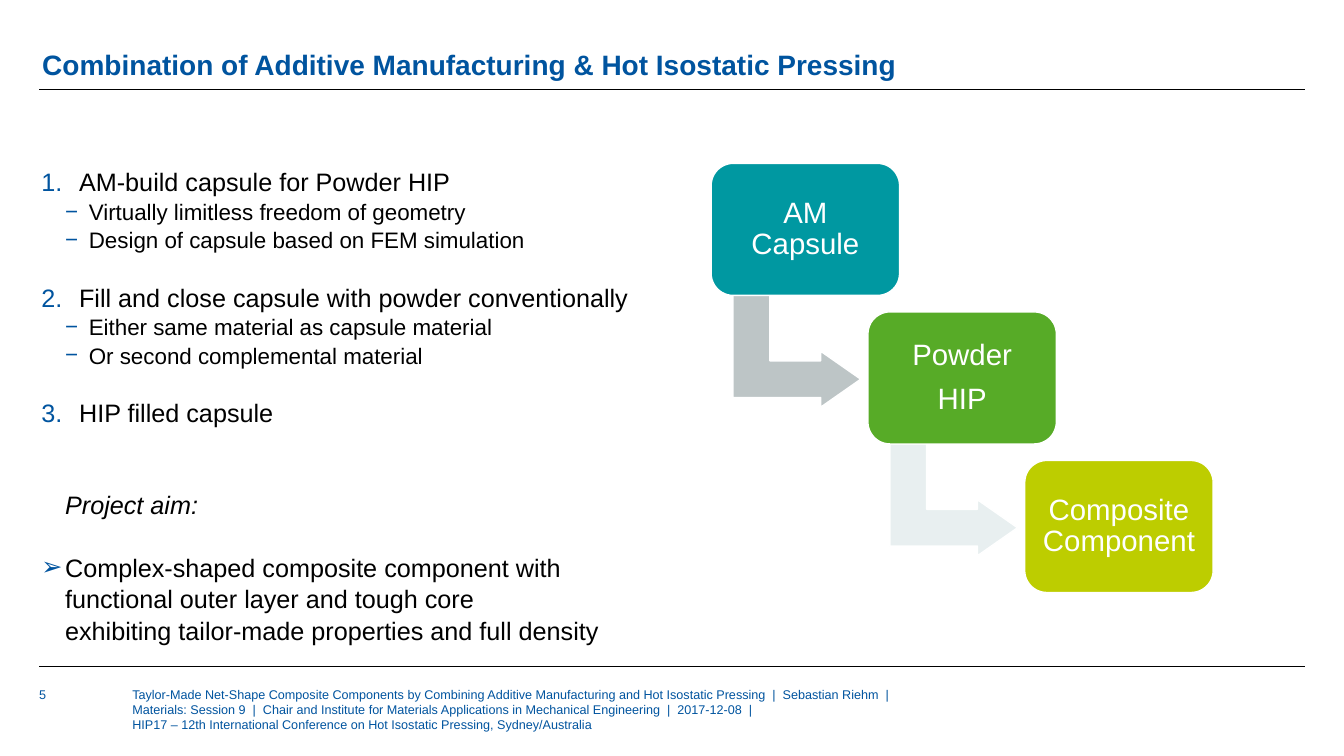
from lxml.etree import SubElement as Sub
from pptx import Presentation
from pptx.dml.color import RGBColor as RGB
from pptx.enum.shapes import MSO_CONNECTOR as Conn, MSO_SHAPE as Kind
from pptx.enum.text import MSO_ANCHOR as Anchor, PP_ALIGN as Align
from pptx.oxml.ns import qn
from pptx.util import Pt

BLUE, BLACK, WHITE = "00549F", "000000", "FFFFFF"


def color(code):
    return RGB.from_string(code)


def write(par, text, size=18, ink=BLACK, bold=False, italic=False, align=None,
          space=None, before=0, level=0, left=0, hang=0, mark=None):
    """Fill one paragraph; mark is a bullet sign, or "1." for numbers."""
    par.text = text
    par.level = level
    props = par._p.get_or_add_pPr()
    props.set("marL", str(Pt(left)))
    props.set("indent", str(Pt(-hang)))
    if mark:
        tint = Sub(props, qn("a:buClr"))
        Sub(tint, qn("a:srgbClr"), val=BLUE)
        Sub(props, qn("a:buFont"), typeface="Arial")
        if mark == "1.":
            Sub(props, qn("a:buAutoNum"), type="arabicPeriod")
        else:
            Sub(props, qn("a:buChar"), char=mark)
    par.alignment = align
    par.line_spacing = space
    par.space_before = Pt(before)
    for run in par.runs:
        font = run.font
        font.name, font.size = "Arial", Pt(size)
        font.bold, font.italic = bold, italic
        font.color.rgb = color(ink)


class Page:
    def __init__(self, deck):
        self.shapes = deck.slides.add_slide(deck.slide_layouts[6]).shapes

    def fill(self, frame, items, anchor, inset=0, **style):
        """Write (text, format) items, one paragraph each."""
        frame.word_wrap = True
        frame.vertical_anchor = anchor
        frame.margin_left = frame.margin_right = Pt(inset)
        frame.margin_top = frame.margin_bottom = Pt(inset)
        for i, (text, extra) in enumerate(items):
            par = frame.add_paragraph() if i else frame.paragraphs[0]
            write(par, text, **{**style, **extra})

    def text(self, x, y, w, h, items, anchor=Anchor.TOP, **style):
        box = self.shapes.add_textbox(Pt(x), Pt(y), Pt(w), Pt(h))
        self.fill(box.text_frame, items, anchor, **style)

    def rule(self, y, x=28, end=932.5):
        line = self.shapes.add_connector(Conn.STRAIGHT, Pt(x), Pt(y), Pt(end), Pt(y))
        line.line.color.rgb = color(BLACK)
        line.line.width = Pt(0.5)
        Sub(line._element.spPr, qn("a:effectLst"))

    def shape(self, kind, x, y, w, h, fill, adjust):
        item = self.shapes.add_shape(kind, Pt(x), Pt(y), Pt(w), Pt(h))
        item.shadow.inherit = False
        item.fill.solid()
        item.fill.fore_color.rgb = color(fill)
        item.line.color.rgb = color(WHITE)
        item.line.width = Pt(1)
        for i, value in enumerate(adjust):
            item.adjustments[i] = value
        return item

    def card(self, x, y, fill, lines):
        card = self.shape(Kind.ROUNDED_RECTANGLE, x, y, 134.6, 94.3, fill, [0.167])
        items = [(line, {"before": 8.4 if i else 0}) for i, line in enumerate(lines)]
        self.fill(card.text_frame, items, Anchor.MIDDLE, inset=6.5, size=21,
                  ink=WHITE, align=Align.CENTER, space=0.9)

    def arrow(self, x, y, fill):
        arrow = self.shape(Kind.BENT_UP_ARROW, x, y, 80, 91.2, fill,
                           [0.328, 0.25, 0.358])
        arrow.rotation = 90


def main():
    deck = Presentation()
    deck.slide_width, deck.slide_height = Pt(960), Pt(540)
    page = Page(deck)

    # Footer and rules
    footer = [
        "Taylor-Made Net-Shape Composite Components by Combining Additive "
        "Manufacturing and Hot Isostatic Pressing  |  Sebastian Riehm  |",
        "Materials: Session 9  |  Chair and Institute for Materials Applications "
        "in Mechanical Engineering  |  2017-12-08  |",
        "HIP17 – 12th International Conference on Hot Isostatic Pressing, "
        "Sydney/Australia",
    ]
    page.text(94.5, 490.3, 551.5, 49.7, [(line, {}) for line in footer],
              size=9, ink=BLUE)
    page.text(28, 490.3, 57.6, 31, [("5", {})], size=9, ink=BLUE)
    for y in (64, 476):
        page.rule(y)

    # Title
    page.text(30.2, 15.8, 904.3, 42.5,
              [("Combination of Additive Manufacturing & Hot Isostatic Pressing", {})],
              anchor=Anchor.BOTTOM, size=20, ink=BLUE, bold=True, space=0.9)

    # Steps and project aim
    step = dict(left=27, hang=27, mark="1.")
    later = dict(step, before=19.3)
    sub = dict(size=16, level=1, left=34, hang=17, mark="−")
    page.text(29.5, 118.1, 450.7, 342.7, [
        ("AM-build capsule for Powder HIP", step),
        ("Virtually limitless freedom of geometry", sub),
        ("Design of capsule based on FEM simulation", sub),
        ("Fill and close capsule with powder conventionally", later),
        ("Either same material as capsule material", sub),
        ("Or second complemental material", sub),
        ("HIP filled capsule", later),
        ("Project aim:", dict(left=17, italic=True, before=43.5)),
        ("Complex-shaped composite component with functional outer layer and "
         "tough core\vexhibiting tailor-made properties and full density",
         dict(left=17, hang=17, mark="➢", before=21.7)),
    ], space=1.05)

    # Process stairs
    stairs = [
        ("0098A1", ["AM Capsule"], "BDC5C6"),
        ("57AB27", ["Powder", "HIP"], "E8EFF0"),
        ("BDCD00", ["Composite Component"], None),
    ]
    for i, (fill, lines, tint) in enumerate(stairs):
        x, y = 508 + 112 * i, 116.7 + 106.1 * i
        if tint:
            page.arrow(x + 21.2, y + 88.6, tint)
        page.card(x, y, fill, lines)

    deck.save("out.pptx")


if __name__ == "__main__":
    main()
